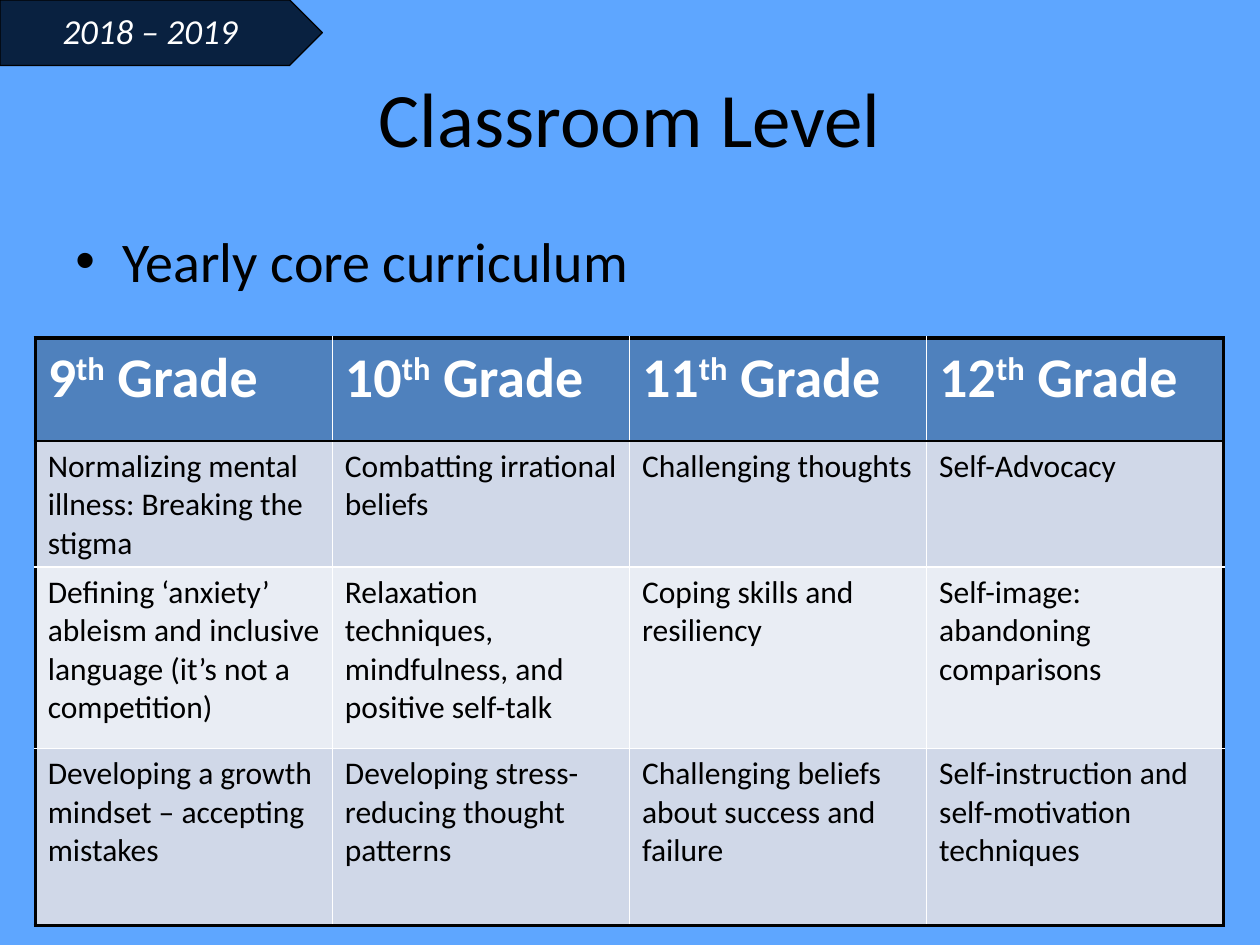
from lxml.etree import SubElement
from pptx import Presentation
from pptx.dml.color import RGBColor
from pptx.enum.shapes import MSO_SHAPE
from pptx.enum.text import MSO_ANCHOR, PP_ALIGN
from pptx.oxml.ns import qn
from pptx.util import Cm, Pt

SKY = RGBColor(0x5E, 0xA6, 0xFF)
NAVY = RGBColor(0x09, 0x21, 0x40)
BLUE = RGBColor(0x4F, 0x81, 0xBD)
PALE = RGBColor(0xD0, 0xD8, 0xE8)
LIGHT = RGBColor(0xE9, 0xED, 0xF4)
BLACK = RGBColor(0, 0, 0)
WHITE = RGBColor(0xFF, 0xFF, 0xFF)

GRADES = ["9", "10", "11", "12"]
TOPICS = [
    ["Normalizing mental illness: Breaking the stigma",
     "Combatting irrational beliefs",
     "Challenging thoughts",
     "Self-Advocacy"],
    ["Defining ‘anxiety’ ableism and inclusive language (it’s not a competition)",
     "Relaxation techniques, mindfulness, and positive self-talk",
     "Coping skills and resiliency",
     "Self-image: abandoning comparisons"],
    ["Developing a growth mindset – accepting mistakes",
     "Developing stress-reducing thought patterns",
     "Challenging beliefs about success and failure",
     "Self-instruction and self-motivation techniques"],
]
HEIGHTS = [2.08, 2.49, 3.66, 3.56]


def style(para, size, color, bold=False, italic=False):
    """Format every run of a paragraph."""
    for run in para.runs:
        font = run.font
        font.name, font.size = "Calibri", Pt(size)
        font.bold, font.italic = bold, italic
        font.color.rgb = color


def add_title(slide, text):
    """Fill and place the title placeholder."""
    title = slide.shapes.title
    title.left, title.top = Cm(1.27), Cm(0.76)
    title.width, title.height = Cm(22.86), Cm(3.18)
    frame = title.text_frame
    frame.text = text
    frame.vertical_anchor = MSO_ANCHOR.MIDDLE
    para = frame.paragraphs[0]
    para.alignment = PP_ALIGN.CENTER
    style(para, 44, BLACK)


def add_bullet(slide, text):
    """Add the bulleted line above the table."""
    box = slide.shapes.add_textbox(Cm(1.27), Cm(4.45), Cm(22.86), Cm(12.57))
    frame = box.text_frame
    frame.word_wrap = True
    frame.text = text
    para = frame.paragraphs[0]
    para.space_before = Pt(6.4)
    style(para, 32, BLACK)
    props = para._p.get_or_add_pPr()
    props.set("marL", str(Cm(0.95)))
    props.set("indent", str(Cm(-0.95)))
    SubElement(props, qn("a:buFont"), typeface="Arial")
    SubElement(props, qn("a:buChar"), char="•")


def add_badge(slide, text):
    """Add the pointed school-year label."""
    badge = slide.shapes.add_shape(MSO_SHAPE.PENTAGON, 0, 0, Cm(6.5), Cm(1.32))
    badge.shadow.inherit = False
    badge.fill.solid()
    badge.fill.fore_color.rgb = NAVY
    badge.line.color.rgb = BLACK
    badge.line.width = Pt(0.75)
    frame = badge.text_frame
    frame.text = text
    frame.vertical_anchor = MSO_ANCHOR.MIDDLE
    frame.margin_left, frame.margin_right = Cm(0.3), Cm(0.41)
    frame.margin_top = frame.margin_bottom = Cm(0.15)
    para = frame.paragraphs[0]
    para.alignment = PP_ALIGN.CENTER
    para.line_spacing = 0.9
    style(para, 20, WHITE, italic=True)


def add_edge(cell, side, color, width):
    """Draw one border of a cell."""
    line = SubElement(cell._tc.get_or_add_tcPr(), qn(f"a:ln{side}"), w=str(Pt(width)))
    fill = SubElement(line, qn("a:solidFill"))
    SubElement(fill, qn("a:srgbClr"), val=str(color))


def frame_cell(cell, row, col, fill):
    """Give a cell its borders and fill."""
    thick, thin, pale = (BLACK, 2.25), (BLACK, 1), (WHITE, 1)
    last = len(TOPICS)
    add_edge(cell, "L", *(thick if col == 0 else pale))
    add_edge(cell, "R", *(thick if col == len(GRADES) - 1 else pale))
    add_edge(cell, "T", *{0: thick, 1: thin}.get(row, pale))
    add_edge(cell, "B", *{0: thin, last: thick}.get(row, pale))
    cell.fill.solid()
    cell.fill.fore_color.rgb = fill


def fill_head(cell, grade):
    """Write a grade with a raised ordinal ending."""
    para = cell.text_frame.paragraphs[0]
    for part in (grade, "th", " Grade"):
        para.add_run().text = part
    style(para, 32, WHITE, bold=True)
    para.runs[1].font._element.set("baseline", "30000")


def fill_topic(cell, text):
    """Write a lesson topic."""
    cell.text_frame.text = text
    style(cell.text_frame.paragraphs[0], 18, BLACK)


def add_grid(slide):
    """Add the table of topics by grade."""
    shape = slide.shapes.add_table(len(HEIGHTS), len(GRADES), Cm(0.71), Cm(6.81),
                                   Cm(23.96), Cm(sum(HEIGHTS)))
    table = shape.table
    for row, high in zip(table.rows, HEIGHTS):
        row.height = Cm(high)
    for col, grade in enumerate(GRADES):
        table.columns[col].width = Cm(5.99)
        head = table.cell(0, col)
        frame_cell(head, 0, col, BLUE)
        fill_head(head, grade)
        for row, topics in enumerate(TOPICS, 1):
            cell = table.cell(row, col)
            frame_cell(cell, row, col, PALE if row % 2 else LIGHT)
            fill_topic(cell, topics[col])


def main():
    """Build and save the slide."""
    deck = Presentation()
    deck.slide_width, deck.slide_height = Cm(25.4), Cm(19.05)
    slide = deck.slides.add_slide(deck.slide_layouts[5])
    back = slide.background.fill
    back.solid()
    back.fore_color.rgb = SKY
    add_title(slide, "Classroom Level")
    add_bullet(slide, "Yearly core curriculum")
    add_grid(slide)
    add_badge(slide, "2018 – 2019")
    deck.save("out.pptx")


if __name__ == "__main__":
    main()
